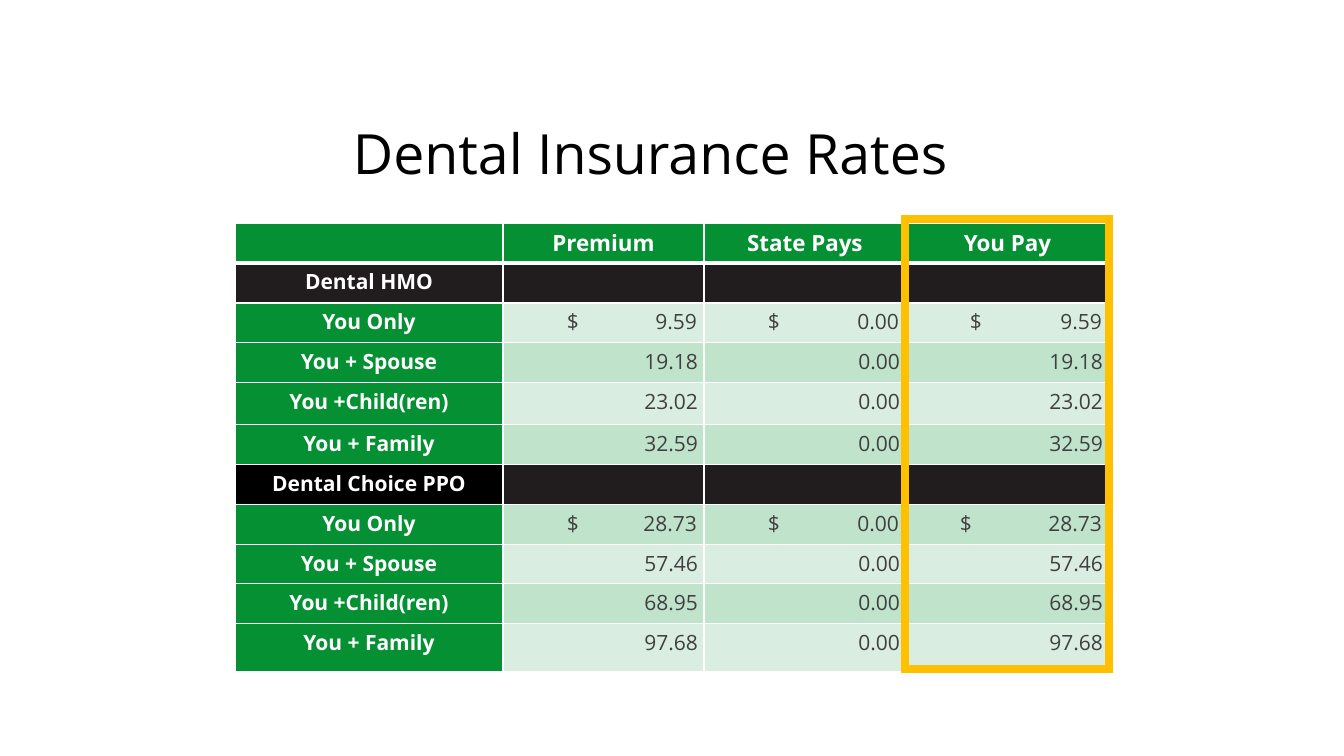
from lxml.etree import SubElement
from pptx import Presentation
from pptx.dml.color import RGBColor
from pptx.enum.shapes import MSO_SHAPE
from pptx.enum.text import MSO_ANCHOR, PP_ALIGN
from pptx.oxml.ns import qn
from pptx.util import Pt

SCALE = 914400 / 100.8
FONT = "Open Sans"
COLORS = {
    "green": "059033",
    "charcoal": "211D1E",
    "black": "000000",
    "white": "FFFFFF",
    "amount": "404040",
    "highlight": "FFC000",
}


def px(length):
    return round(length * SCALE)


def style(paragraph, size, color, bold=False):
    font = paragraph.font
    font.name, font.size, font.bold = FONT, Pt(size), bold
    font.color.rgb = RGBColor.from_string(COLORS[color])


presentation = Presentation()
presentation.slide_width, presentation.slide_height = px(1344), px(756)
slide = presentation.slides.add_slide(presentation.slide_layouts[6])

# Title
title = slide.shapes.add_textbox(px(343), px(117), px(657), px(79)).text_frame
title.word_wrap = True
title.vertical_anchor = MSO_ANCHOR.MIDDLE
heading = title.paragraphs[0]
heading.text = "Dental Insurance Rates"
heading.line_spacing = 0.9
style(heading, 39.6, "black")

# Rates: a tab separates the dollar sign from its amount
rates = [
    ["", "Premium", "State Pays", "You Pay"],
    ["Dental HMO", "", "", ""],
    ["You Only", "$\t9.59", "$\t0.00", "$\t9.59"],
    ["You + Spouse", "19.18", "0.00", "19.18"],
    ["You +Child(ren)", "23.02", "0.00", "23.02"],
    ["You + Family", "32.59", "0.00", "32.59"],
    ["Dental Choice PPO", "", "", ""],
    ["You Only", "$\t28.73", "$\t0.00", "$\t28.73"],
    ["You + Spouse", "57.46", "0.00", "57.46"],
    ["You +Child(ren)", "68.95", "0.00", "68.95"],
    ["You + Family", "97.68", "0.00", "97.68"],
]
HEADER, HMO, PPO = 0, 1, 6
column_widths = [268, 201, 202, 203]
row_heights = [40, 40, 40, 40, 42, 40, 40, 40, 39, 40, 48]
INSET, DOLLAR_INSET = 6, 64
shifted_dollars = {(7, 3): 54}

table = slide.shapes.add_table(
    len(rates), len(column_widths), px(235), px(223),
    px(sum(column_widths)), px(sum(row_heights))).table
for column, width in zip(table.columns, column_widths):
    column.width = px(width)
for row, height in zip(table.rows, row_heights):
    row.height = px(height)

for r, entries in enumerate(rates):
    for c, entry in enumerate(entries):
        cell = table.cell(r, c)
        is_amount = c > 0 and r not in (HEADER, HMO, PPO)
        cell.margin_left = cell.margin_right = px(INSET)
        cell.margin_top = cell.margin_bottom = 0

        # Borders, thicker below the header
        properties = cell._tc.get_or_add_tcPr()
        for side in "LRTB":
            thick = (r, side) in ((HEADER, "B"), (HMO, "T"))
            border = SubElement(properties, qn(f"a:ln{side}"), w=str(Pt(3 if thick else 1)))
            border_fill = SubElement(border, qn("a:solidFill"))
            SubElement(border_fill, qn("a:srgbClr"), val=COLORS["white"])

        # Fill, with alternating tints behind the amounts
        if r == PPO and c == 0:
            fill_color = "black"
        elif r in (HMO, PPO):
            fill_color = "charcoal"
        else:
            fill_color = "green"
        cell.fill.solid()
        cell.fill.fore_color.rgb = RGBColor.from_string(COLORS[fill_color])
        if is_amount:
            tint = properties.find(qn("a:solidFill")).find(qn("a:srgbClr"))
            SubElement(tint, qn("a:alpha"), val="25000" if r % 2 else "15000")

        # Text
        paragraph = cell.text_frame.paragraphs[0]
        paragraph.text = entry
        paragraph.line_spacing = 1.15
        paragraph.alignment = PP_ALIGN.RIGHT if is_amount else PP_ALIGN.CENTER
        if "\t" in entry:
            dollar_inset = shifted_dollars.get((r, c), DOLLAR_INSET)
            cell.margin_left = px(dollar_inset)
            paragraph.alignment = PP_ALIGN.LEFT
            tabs = SubElement(paragraph._p.get_or_add_pPr(), qn("a:tabLst"))
            amount_edge = px(column_widths[c] - dollar_inset - INSET - 1)
            SubElement(tabs, qn("a:tab"), pos=str(amount_edge), algn="r")
        style(paragraph, 16 if r == HEADER else 15,
              "amount" if is_amount else "white", not is_amount)

# Frame around the You Pay column
pay_frame = slide.shapes.add_shape(MSO_SHAPE.RECTANGLE, px(905), px(219), px(204), px(450))
pay_frame.shadow.inherit = False
pay_frame.fill.background()
pay_frame.line.color.rgb = RGBColor.from_string(COLORS["highlight"])
pay_frame.line.width = Pt(6)
SubElement(pay_frame._element.spPr.find(qn("a:ln")), qn("a:miter"), lim="800000")

presentation.save("out.pptx")
